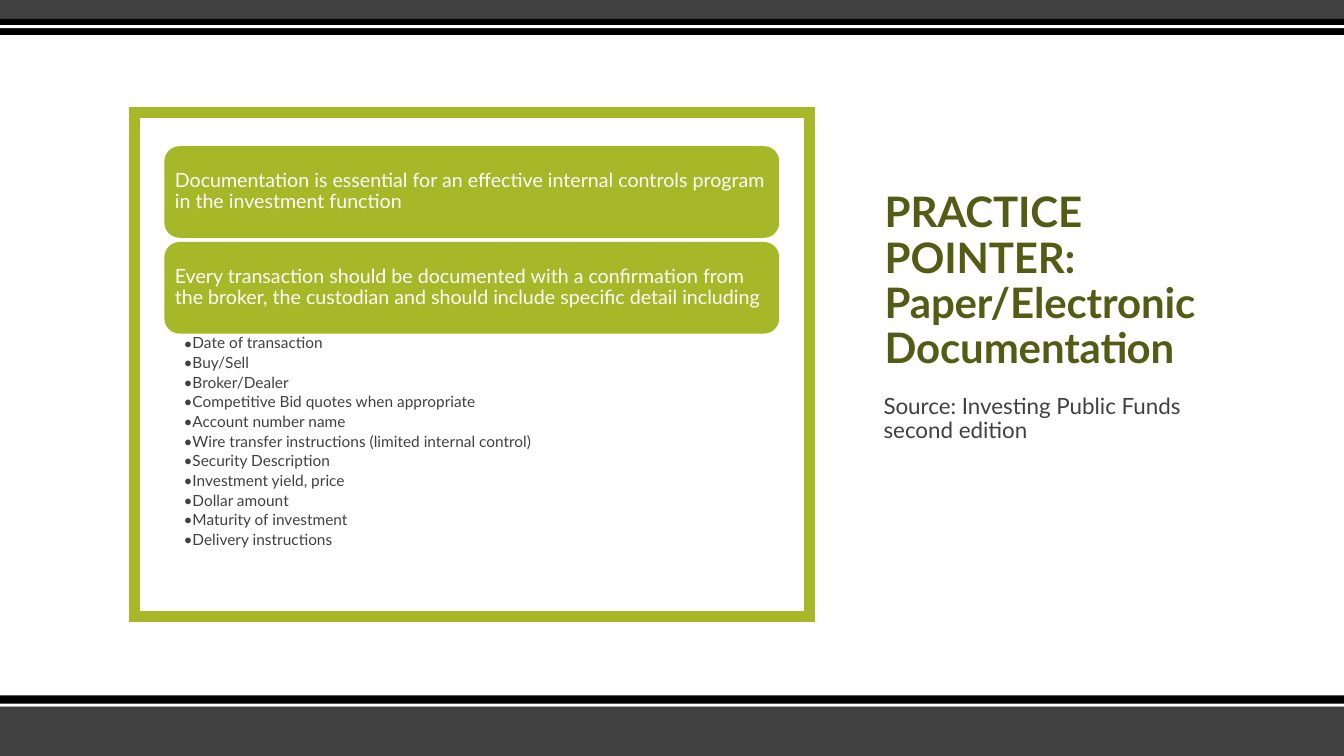
from copy import deepcopy

from lxml.etree import SubElement
from pptx import Presentation
from pptx.dml.color import RGBColor
from pptx.enum.shapes import MSO_SHAPE
from pptx.enum.text import MSO_ANCHOR, MSO_AUTO_SIZE, PP_ALIGN
from pptx.oxml.ns import qn
from pptx.util import Inches, Pt

WIDTH, HEIGHT = Inches(13.33), Inches(7.5)
FONT = "Lato"
GREEN, OLIVE, GREY, BLACK, WHITE = "A6B727", "535C14", "404040", "000000", "FFFFFF"

BANDS = [
    (93.33, 6.67, GREY), (92, 1.5, BLACK), (93.07, 0.4, WHITE),
    (0, 2.5, GREY), (2.5, 2.13, BLACK), (3.33, 0.4, WHITE),
]
STATEMENTS = [
    "Documentation is essential for an effective internal controls program in the investment function",
    "Every transaction should be documented with a confirmation from the broker, "
    "the custodian and should include specific detail including",
]
DETAILS = [
    "Date of transaction", "Buy/Sell", "Broker/Dealer",
    "Competitive Bid quotes when appropriate", "Account number name",
    "Wire transfer instructions (limited internal control)",
    "Security Description", "Investment yield, price", "Dollar amount",
    "Maturity of investment", "Delivery instructions",
]
CARD_LEFT, CARD_TOP, CARD_WIDTH, CARD_HEIGHT, CARD_PITCH = 12.23, 19.33, 45.75, 12.13, 12.67


def color(hex_code):
    return RGBColor.from_string(hex_code)


def area(left, top, width, height):
    return (int(WIDTH * left / 100), int(HEIGHT * top / 100),
            int(WIDTH * width / 100), int(HEIGHT * height / 100))


def add_block(slide, preset, place, fill):
    block = slide.shapes.add_shape(preset, *area(*place))
    block.shadow.inherit = False
    block.fill.solid()
    block.fill.fore_color.rgb = color(fill)
    block.line.fill.background()
    return block


def add_frame(slide, place):
    frame = slide.shapes.add_shape(MSO_SHAPE.RECTANGLE, *area(*place))
    frame.shadow.inherit = False
    frame.fill.background()
    frame.line.color.rgb = color(GREEN)
    frame.line.width = Pt(8)
    SubElement(frame.line._get_or_add_ln(), qn("a:miter"), lim="800000")


def write(frame, text, size, ink, anchor=MSO_ANCHOR.TOP, bold=False):
    frame.text = text
    frame.word_wrap = True
    frame.auto_size = MSO_AUTO_SIZE.NONE
    frame.vertical_anchor = anchor
    for paragraph in frame.paragraphs:
        paragraph.alignment = PP_ALIGN.LEFT
        paragraph.line_spacing = 0.9
        for run in paragraph.runs:
            run.font.name = FONT
            run.font.size = Pt(size)
            run.font.bold = bold
            run.font.color.rgb = color(ink)


def set_insets(frame, left, top, right, bottom):
    frame.margin_left, frame.margin_top = Inches(left), Inches(top)
    frame.margin_right, frame.margin_bottom = Inches(right), Inches(bottom)


def add_text(slide, place, text, size, ink):
    frame = slide.shapes.add_textbox(*area(*place)).text_frame
    write(frame, text, size, ink)
    return frame


def add_card(slide, row, statement):
    place = (CARD_LEFT, CARD_TOP + row * CARD_PITCH, CARD_WIDTH, CARD_HEIGHT)
    card = add_block(slide, MSO_SHAPE.ROUNDED_RECTANGLE, place, GREEN)
    write(card.text_frame, statement, 14, WHITE, MSO_ANCHOR.MIDDLE)
    set_insets(card.text_frame, 0.06, 0.06, 0.06, 0.06)


def add_bullets(slide, place, items):
    frame = add_text(slide, place, "\n".join(items), 11, GREY)
    set_insets(frame, 0.19, 0.02, 0.11, 0.02)
    for paragraph in frame.paragraphs:
        paragraph.space_after = Pt(2.15)
        properties = paragraph._p.get_or_add_pPr()
        properties.set("marL", str(Inches(0.06)))
        properties.set("indent", str(-Inches(0.06)))
        SubElement(properties, qn("a:buFont"), typeface=FONT)
        SubElement(properties, qn("a:buChar"), char="•")


def set_title(slide, place, text):
    title = slide.shapes.title
    title.left, title.top, title.width, title.height = area(*place)
    write(title.text_frame, text, 30, OLIVE, MSO_ANCHOR.BOTTOM, bold=True)
    heading = title.text_frame.paragraphs[0]
    heading._p.get_or_add_pPr().set("marL", str(Inches(0.01)))
    for run in heading.runs:
        run.font._element.set("spc", "-10")
    for line_break in heading._p.findall(qn("a:br")):
        line_break.append(deepcopy(heading.runs[0].font._element))


def main():
    deck = Presentation()
    deck.slide_width, deck.slide_height = WIDTH, HEIGHT
    slide = deck.slides.add_slide(deck.slide_layouts[5])
    for top, height, fill in BANDS:
        add_block(slide, MSO_SHAPE.RECTANGLE, (0, top, 100, height), fill)
    add_frame(slide, (10, 14.87, 50.25, 66.67))
    set_title(slide, (65, 20, 25.65, 30), "PRACTICE POINTER: \vPaper/Electronic Documentation")
    source = add_text(slide, (65, 51.6, 25.65, 26.27),
                      "Source: Investing Public Funds second edition", 16, GREY)
    source.paragraphs[0].space_before = Pt(8)
    for row, statement in enumerate(STATEMENTS):
        add_card(slide, row, statement)
    details_top = CARD_TOP + CARD_PITCH + CARD_HEIGHT
    add_bullets(slide, (CARD_LEFT, details_top, CARD_WIDTH, 32.93), DETAILS)
    deck.save("out.pptx")


if __name__ == "__main__":
    main()
